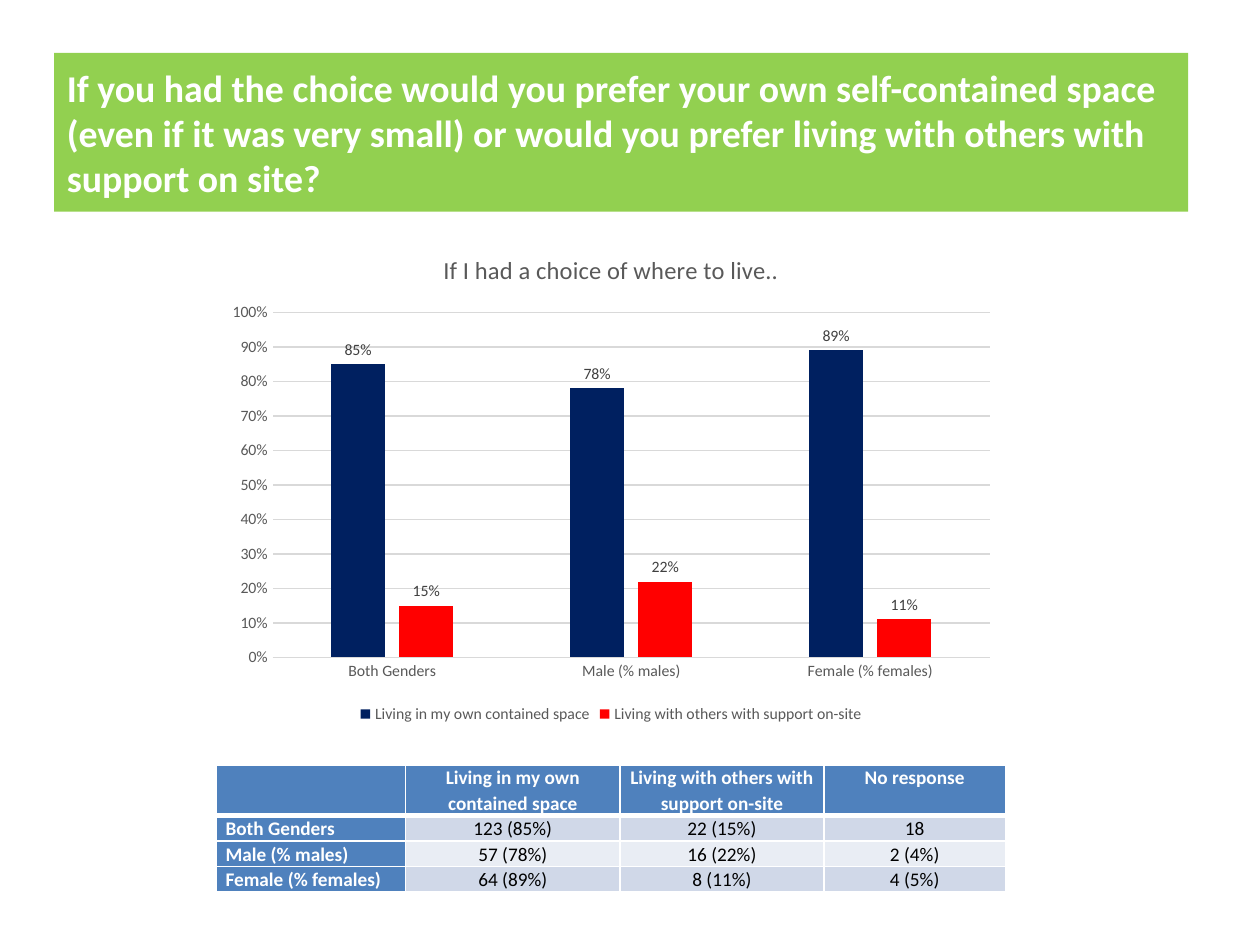
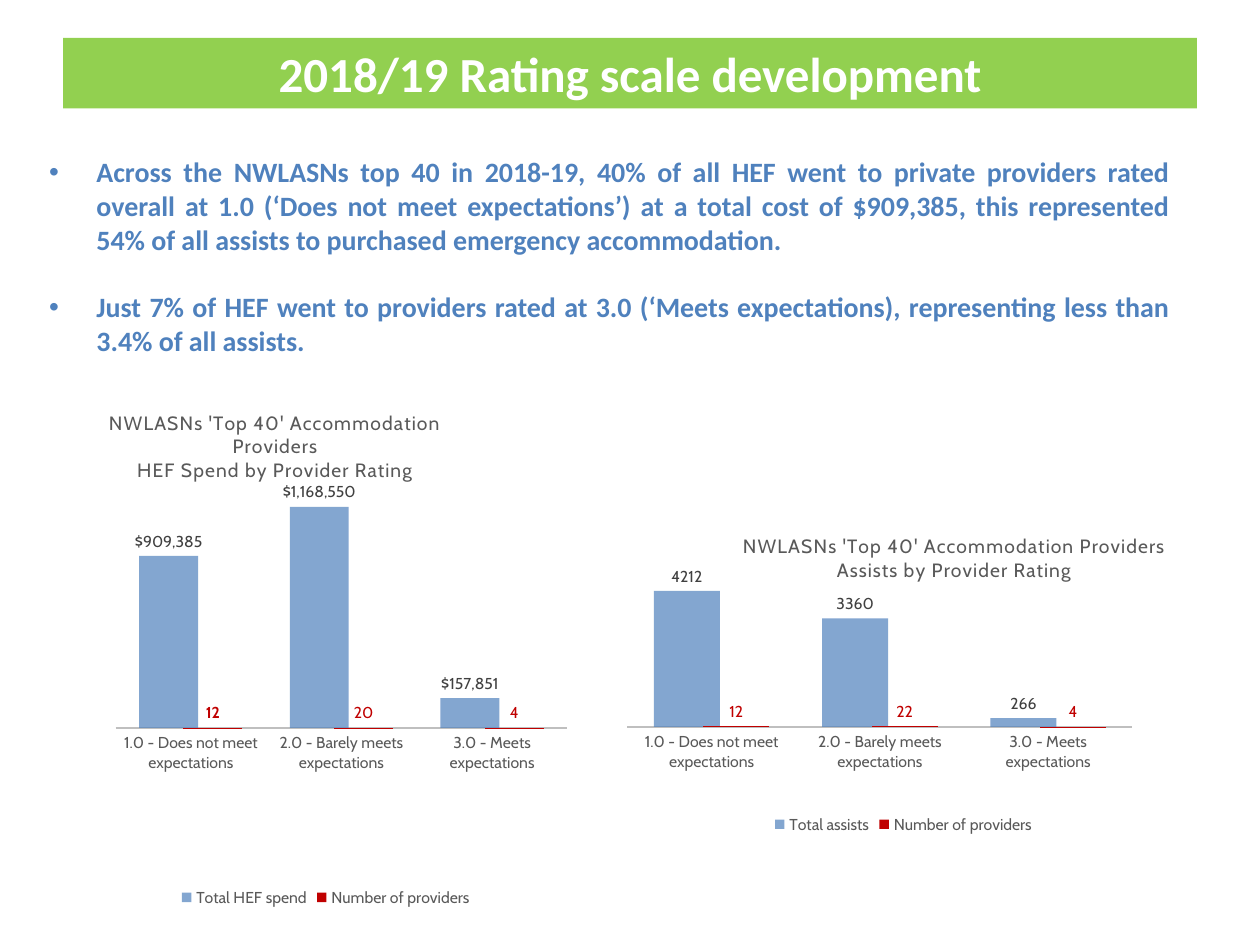
from lxml.etree import SubElement
from pptx import Presentation
from pptx.chart.data import CategoryChartData
from pptx.dml.color import RGBColor
from pptx.enum.chart import XL_CHART_TYPE as ChartType, XL_LABEL_POSITION as LabelPosition
from pptx.enum.chart import XL_LEGEND_POSITION as LegendPosition, XL_TICK_MARK as TickMark
from pptx.enum.text import MSO_AUTO_SIZE as AutoSize, PP_ALIGN as Align
from pptx.oxml import parse_xml
from pptx.oxml.ns import nsdecls, qn
from pptx.util import Inches, Pt

color = RGBColor.from_string
GREEN, BLUE, NAVY, RED, DARK_RED = "92D050", "4F81BD", "002060", "FF0000", "C00000"
WHITE, BLACK, GREY, DARK_GREY, GRID_GREY, AXIS_GREY = (
    "FFFFFF", "000000", "595959", "404040", "D9D9D9", "BFBFBF")
BAND_COLORS = ["D0D8E8", "E9EDF4"]
MAIN_FONT, CHART_FONT = "Calibri", "Cabin"


def style_font(font, size, hex_color, name=MAIN_FONT, bold=False):
    font.size, font.name, font.bold = Pt(size), name, bold
    font.color.rgb = color(hex_color)


def write(paragraph, text, align=Align.LEFT, line_spacing=None, space_before=0,
          letter_spacing=0, **font_format):
    """Add one formatted run; letter_spacing is in points."""
    paragraph.alignment = align
    paragraph.line_spacing = line_spacing
    paragraph.space_before = Pt(space_before)
    run = paragraph.add_run()
    run.text = text
    style_font(run.font, **font_format)
    if letter_spacing:
        run.font._element.set("spc", str(int(letter_spacing * 100)))


presentation = Presentation()
presentation.slide_width, presentation.slide_height = Inches(10), Inches(7.5)
# The grid is 100 columns by 75 rows of square units; boxes are left, top, width, height.
UNIT = presentation.slide_width // 100

# Slides with their title bands
title_specs = [
    (5, (4.3, 4.2, 90, 12.6), 21.6, Align.LEFT,
     "If you had the choice would you prefer your own self-contained space (even if it "
     "was very small) or would you prefer living with others with support on site?"),
    (1, (5, 3, 90, 5.6), 28, Align.CENTER, "2018/19 Rating scale development"),
]
slides = []
for layout_index, box, size, align, text in title_specs:
    slide = presentation.slides.add_slide(presentation.slide_layouts[layout_index])
    slides.append(slide)
    title = slide.shapes.title
    title.left, title.top, title.width, title.height = [int(value * UNIT) for value in box]
    title.fill.solid()
    title.fill.fore_color.rgb = color(GREEN)
    title.text_frame.auto_size = AutoSize.NONE
    write(title.text_frame.paragraphs[0], text, align=align, size=size,
          hex_color=WHITE, bold=True)
choice_slide, rating_slide = slides

# Findings on the rating slide
findings = [
    "Across the NWLASNs top 40 in 2018-19, 40% of all HEF went to private providers rated "
    "overall at 1.0 (‘Does not meet expectations’) at a total cost of $909,385, this "
    "represented 54% of all assists to purchased emergency accommodation.",
    "Just 7% of HEF went to providers rated at 3.0 (‘Meets expectations), representing "
    "less than 3.4% of all assists.",
]
body = rating_slide.placeholders[1]
body.left, body.top, body.width, body.height = [
    int(value * UNIT) for value in (2.9, 11.8, 91, 17.2)]
body.text_frame.auto_size = AutoSize.NONE
for index, finding in enumerate(findings):
    paragraph = body.text_frame.add_paragraph() if index else body.text_frame.paragraphs[0]
    write(paragraph, finding, align=Align.JUSTIFY, space_before=19.5 * index,
          size=16, hex_color=BLUE, bold=True)

# Charts
genders = ["Both Genders", "Male (% males)", "Female (% females)"]
choices = ["Living in my own contained space", "Living with others with support on-site"]
ratings = ["1.0 - Does not meet expectations", "2.0 - Barely meets expectations",
           "3.0 - Meets expectations"]
rating_look = dict(slide=rating_slide, categories=ratings, font=CHART_FONT, title_size=11,
                   letter_spacing=0.5, gap=80, overlap=25, axis_line=(AXIS_GREY, 1.25))
chart_specs = [
    dict(slide=choice_slide, box=(17.2, 18.4, 62.6, 39.4), categories=genders,
         font=MAIN_FONT, title=["If I had a choice of where to live.."], title_size=14,
         letter_spacing=0, gap=219, overlap=-27, axis_line=(GRID_GREY, 0.75),
         maximum=1, major_unit=0.1,
         series=[(choices[0], [0.85, 0.78, 0.89], NAVY, DARK_GREY, "0%"),
                 (choices[1], [0.15, 0.22, 0.11], RED, DARK_GREY, "0%")]),
    dict(rating_look, box=(5, 26.7, 41.7, 45.7), maximum=1400000,
         title=["NWLASNs 'Top 40' Accommodation Providers", "HEF Spend by Provider Rating"],
         title_place=(0.08, 0.12), plot_place=(0.1, 0.22, 0.86, 0.46), bold_label=(1, 0),
         series=[("Total HEF spend", [909385, 1168550, 157851], BLUE, DARK_GREY, '"$"#,##0'),
                 ("Number of providers", [12, 20, 4], DARK_RED, DARK_RED, "General")]),
    dict(rating_look, box=(48.4, 40.4, 46.6, 26.2), maximum=4500,
         title=["NWLASNs 'Top 40' Accommodation Providers", "Assists by Provider Rating"],
         title_place=(0.22, 0.06), plot_place=(0.03, 0.22, 0.86, 0.44),
         series=[("Total assists", [4212, 3360, 266], BLUE, DARK_GREY, "General"),
                 ("Number of providers", [12, 22, 4], DARK_RED, DARK_RED, "General")]),
]
for spec in chart_specs:
    font_name = spec["font"]
    chart_data = CategoryChartData()
    chart_data.categories = spec["categories"]
    for name, values, _, _, number_format in spec["series"]:
        chart_data.add_series(name, values, number_format)
    chart = spec["slide"].shapes.add_chart(
        ChartType.COLUMN_CLUSTERED, *[int(value * UNIT) for value in spec["box"]],
        chart_data).chart
    style_font(chart.font, 10, BLACK, font_name)

    title_frame = chart.chart_title.text_frame
    for index, line in enumerate(spec["title"]):
        paragraph = title_frame.add_paragraph() if index else title_frame.paragraphs[0]
        write(paragraph, line, align=Align.CENTER, size=spec["title_size"], hex_color=GREY,
              name=font_name, letter_spacing=spec["letter_spacing"])
    chart.chart_title.include_in_layout = False

    chart.has_legend = True
    chart.legend.position = LegendPosition.BOTTOM
    chart.legend.include_in_layout = False
    style_font(chart.legend.font, 9, GREY, font_name)

    category_axis, value_axis = chart.category_axis, chart.value_axis
    line_color, line_width = spec["axis_line"]
    category_axis.major_tick_mark = value_axis.major_tick_mark = TickMark.NONE
    category_axis.format.line.color.rgb = color(line_color)
    category_axis.format.line.width = Pt(line_width)
    style_font(category_axis.tick_labels.font, 9, GREY, font_name)
    value_axis.minimum_scale, value_axis.maximum_scale = 0, spec["maximum"]
    if "major_unit" in spec:
        value_axis.major_unit = spec["major_unit"]
        value_axis.format.line.fill.background()
        value_axis.major_gridlines.format.line.color.rgb = color(GRID_GREY)
        value_axis.major_gridlines.format.line.width = Pt(0.75)
        value_axis.tick_labels.number_format = "0%"
        value_axis.tick_labels.number_format_is_linked = False
        style_font(value_axis.tick_labels.font, 9, GREY, font_name)
    else:
        value_axis.has_major_gridlines = False
        value_axis.visible = False

    plot = chart.plots[0]
    plot.gap_width, plot.overlap, plot.vary_by_categories = spec["gap"], spec["overlap"], False
    for series, (_, _, fill_color, label_color, number_format) in zip(
            plot.series, spec["series"]):
        series.format.fill.solid()
        series.format.fill.fore_color.rgb = color(fill_color)
        if fill_color == BLUE:
            fill_element = next(series._element.iter(qn("a:srgbClr")))
            SubElement(fill_element, qn("a:alpha"), val="70000")
        labels = series.data_labels
        labels.show_value, labels.position = True, LabelPosition.OUTSIDE_END
        labels.number_format, labels.number_format_is_linked = number_format, False
        style_font(labels.font, 9, label_color, font_name)
    if "bold_label" in spec:
        series_index, point_index = spec["bold_label"]
        label = plot.series[series_index].points[point_index].data_label
        style_font(label.font, 9, DARK_RED, font_name, bold=True)
        label.position = LabelPosition.OUTSIDE_END

    # Manual places are shares of the chart's size
    plot_area = chart._chartSpace.chart.plotArea
    for parent, key, position in [(chart.chart_title._element, "title_place", 1),
                                  (plot_area, "plot_place", 0)]:
        if key not in spec:
            continue
        for old_layout in parent.findall(qn("c:layout")):
            parent.remove(old_layout)
        layout = parse_xml(f"<c:layout {nsdecls('c')}><c:manualLayout/></c:layout>")
        manual = layout[0]
        if key == "plot_place":
            SubElement(manual, qn("c:layoutTarget"), val="inner")
        for tag in ("xMode", "yMode"):
            SubElement(manual, qn(f"c:{tag}"), val="edge")
        for tag, share in zip("xywh", spec[key]):
            SubElement(manual, qn(f"c:{tag}"), val=str(share))
        parent.insert(position, layout)

# Table of answers
answers = [
    ["", *choices, "No response"],
    [genders[0], "123 (85%)", "22 (15%)", "18"],
    [genders[1], "57 (78%)", "16 (22%)", "2 (4%)"],
    [genders[2], "64 (89%)", "8 (11%)", "4 (5%)"],
]
table = choice_slide.shapes.add_table(
    4, 4, *[int(value * UNIT) for value in (17.2, 60.7, 62.6, 9.8)]).table
table.first_col = True
for column, width in zip(table.columns, (15, 17, 16.2, 14.4)):
    column.width = int(width * UNIT)
for row_index, (row, texts) in enumerate(zip(table.rows, answers)):
    row.height = int((2 if row_index else 3.9) * UNIT)
    for column_index, (cell, text) in enumerate(zip(row.cells, texts)):
        is_header = row_index == 0 or column_index == 0
        cell.margin_left = cell.margin_right = Inches(0.07)
        cell.margin_top = cell.margin_bottom = 0
        cell.fill.solid()
        cell.fill.fore_color.rgb = color(
            BLUE if is_header else BAND_COLORS[(row_index - 1) % 2])
        write(cell.text_frame.paragraphs[0], text, line_spacing=1.07, size=11,
              align=Align.CENTER if column_index else Align.LEFT,
              hex_color=WHITE if is_header else BLACK, bold=is_header)
        heavy_side = {0: "B", 1: "T"}.get(row_index)
        for position, side in enumerate("LRTB"):
            width = Pt(3 if side == heavy_side else 1)
            cell._tc.tcPr.insert(position, parse_xml(
                f'<a:ln{side} {nsdecls("a")} w="{width}"><a:solidFill>'
                f'<a:srgbClr val="{WHITE}"/></a:solidFill></a:ln{side}>'))

presentation.save("out.pptx")
